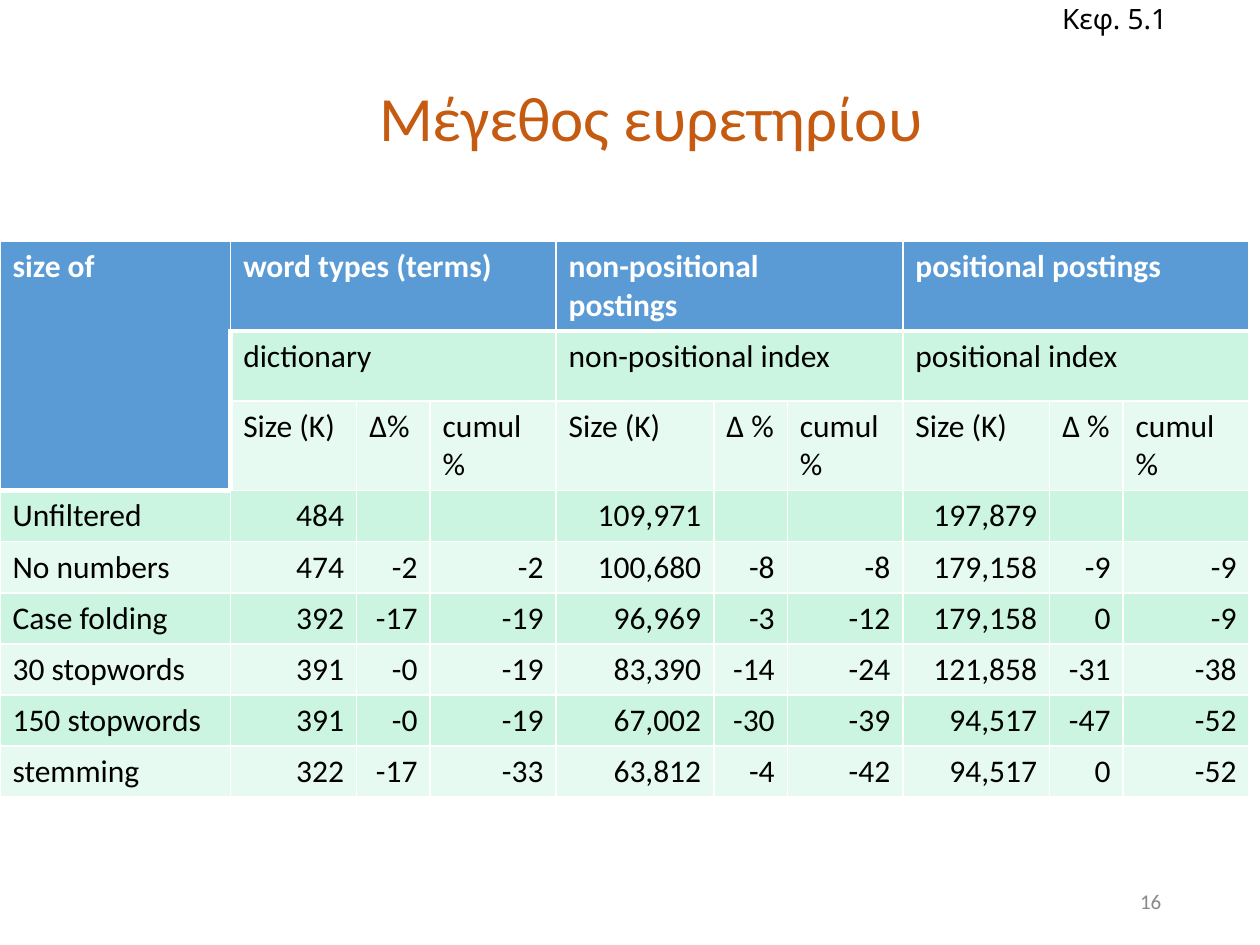
import pptx
import pptx.dml.color
import pptx.enum.text
import pptx.oxml
import pptx.oxml.ns
import pptx.util

Cm, Pt = pptx.util.Cm, pptx.util.Pt
ALIGN = pptx.enum.text.PP_ALIGN
MIDDLE = pptx.enum.text.MSO_ANCHOR.MIDDLE
COLORS = {
    "title": "C55A11", "header": "5B9BD5", "band": "CBF5E1", "light": "E7FAF1",
    "text": "000000", "white": "FFFFFF", "number": "898989",
}
COL_WIDTHS = [4.65, 2.54, 1.48, 2.54, 3.18, 1.48, 2.33, 2.96, 1.48, 2.54]
ROW_HEIGHTS = [1.7, 1.41, 1.09] + [1.03] * 6
GROUP_STARTS = (1, 4, 7)
ROWS = [
    ["size of", "word types (terms)", "", "", "non-positional\npostings", "", "", "positional postings", "", ""],
    ["", "dictionary", "", "", "non-positional index", "", "", "positional index", "", ""],
    ["", "Size (K)", "∆%", "cumul %", "Size (K)", "∆ %", "cumul %", "Size (K)", "∆ %", "cumul %"],
    ["Unfiltered", "484", "", "", "109,971", "", "", "197,879", "", ""],
    ["No numbers", "474", "-2", "-2", "100,680", "-8", "-8", "179,158", "-9", "-9"],
    ["Case folding", "392", "-17", "-19", "96,969", "-3", "-12", "179,158", "0", "-9"],
    ["30 stopwords", "391", "-0", "-19", "83,390", "-14", "-24", "121,858", "-31", "-38"],
    ["150 stopwords", "391", "-0", "-19", "67,002", "-30", "-39", "94,517", "-47", "-52"],
    ["stemming", "322", "-17", "-33", "63,812", "-4", "-42", "94,517", "0", "-52"],
]


class SlideBuilder:
    """Holds the style and the current slide and adds each kind of element."""

    def __init__(self, prs, font="Calibri"):
        self.font = font
        self.slide = prs.slides.add_slide(prs.slide_layouts[5])

    def format_text(self, tf, size, color, align=ALIGN.LEFT, bold=False, font=None):
        for p in tf.paragraphs:
            p.alignment = align
            for r in p.runs:
                r.font.name = font or self.font
                r.font.size = Pt(size)
                r.font.bold = bold
                r.font.color.rgb = pptx.dml.color.RGBColor.from_string(COLORS[color])

    def title(self, text, left, top, width, height):
        sp = self.slide.shapes.title
        sp.left, sp.top, sp.width, sp.height = Cm(left), Cm(top), Cm(width), Cm(height)
        tf = sp.text_frame
        tf.text = text
        tf.vertical_anchor = MIDDLE
        tf.paragraphs[0].line_spacing = 0.9
        self.format_text(tf, 36, "title", ALIGN.CENTER)

    def text(self, text, left, top, width, height, size, color, align=ALIGN.LEFT, wrap=True, font=None):
        sp = self.slide.shapes.add_textbox(Cm(left), Cm(top), Cm(width), Cm(height))
        tf = sp.text_frame
        tf.text = text
        tf.word_wrap = wrap
        tf.vertical_anchor = MIDDLE
        if not wrap:
            tf.auto_size = pptx.enum.text.MSO_AUTO_SIZE.SHAPE_TO_FIT_TEXT
        self.format_text(tf, size, color, align, font=font)

    def borders(self, cell, row, col):
        heavy = {
            "L": col == 1 and row in (1, 2),
            "R": col == 0 and row in (1, 2),
            "T": (row == 1 and col > 0) or (row == 3 and col == 0),
            "B": row == 0 or (row == 2 and col == 0),
        }
        tc_pr = cell._tc.get_or_add_tcPr()
        for side, is_heavy in heavy.items():
            tc_pr.append(pptx.oxml.parse_xml(
                f'<a:ln{side} {pptx.oxml.ns.nsdecls("a")} w="{Pt(3 if is_heavy else 1)}">'
                f'<a:solidFill><a:srgbClr val="{COLORS["white"]}"/></a:solidFill></a:ln{side}>'
            ))

    def cell(self, cell, text, row, col):
        header = row == 0 or (col == 0 and row < 3)
        fill = "header" if header else "band" if row % 2 else "light"
        self.borders(cell, row, col)
        cell.fill.solid()
        cell.fill.fore_color.rgb = pptx.dml.color.RGBColor.from_string(COLORS[fill])
        cell.text_frame.text = text
        align = ALIGN.RIGHT if row > 2 and col > 0 else ALIGN.LEFT
        self.format_text(cell.text_frame, 18, "white" if header else "text", align, header)

    def table(self, rows, left, top):
        frame = self.slide.shapes.add_table(
            len(rows), len(COL_WIDTHS), Cm(left), Cm(top), Cm(sum(COL_WIDTHS)), Cm(sum(ROW_HEIGHTS)))
        table = frame.table
        for column, width in zip(table.columns, COL_WIDTHS):
            column.width = Cm(width)
        for table_row, height in zip(table.rows, ROW_HEIGHTS):
            table_row.height = Cm(height)
        for row, values in enumerate(rows):
            for col, value in enumerate(values):
                self.cell(table.cell(row, col), value, row, col)
        table.cell(0, 0).merge(table.cell(2, 0))
        for row in (0, 1):
            for col in GROUP_STARTS:
                table.cell(row, col).merge(table.cell(row, col + 2))


def main():
    prs = pptx.Presentation()
    prs.slide_width, prs.slide_height = Cm(25.4), Cm(19.05)
    s = SlideBuilder(prs)
    s.title("Μέγεθος ευρετηρίου", 1.48, 1.06, 23.28, 2.75)
    s.table(ROWS, 0, 4.87)
    s.text("16", 17.94, 17.66, 5.72, 1.01, 12, "number", ALIGN.RIGHT)
    s.text("Κεφ. 5.1", 21.16, -0.1, 2.79, 0.94, 16, "text", wrap=False, font="Noto Sans")
    prs.save("out.pptx")


if __name__ == "__main__":
    main()
